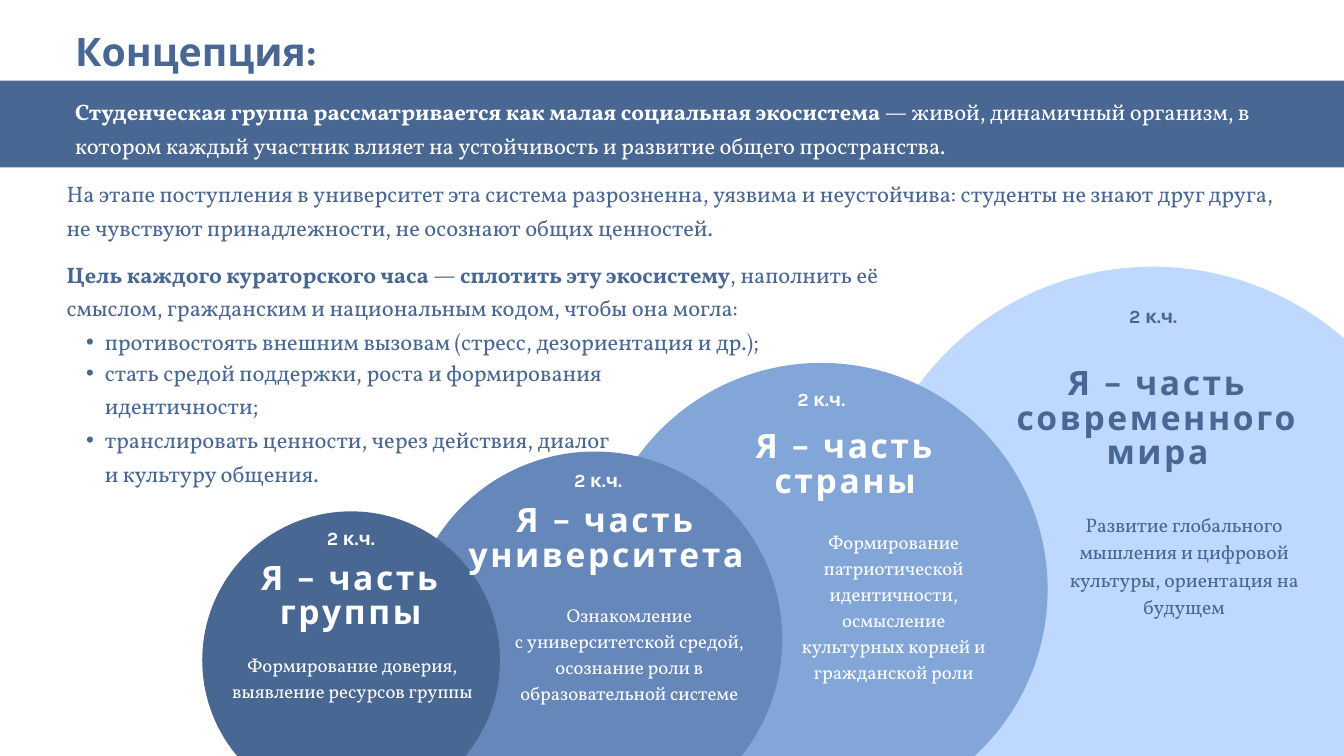
from dataclasses import dataclass
from typing import NamedTuple

from lxml.etree import SubElement
from pptx import Presentation
from pptx.dml.color import RGBColor
from pptx.enum.shapes import MSO_SHAPE
from pptx.enum.text import MSO_ANCHOR, MSO_AUTO_SIZE, PP_ALIGN
from pptx.oxml.ns import qn
from pptx.util import Pt

COLORS = {
    "navy": "496793",
    "steel": "6587B9",
    "sky": "83A6D9",
    "pale": "BED8FF",
    "white": "FFFFFF",
}


class Box(NamedTuple):
    left: float
    top: float
    width: float
    height: float


@dataclass(frozen=True)
class Style:
    font: str
    size: float
    line: float
    color: str
    bold: bool = False
    align: PP_ALIGN = PP_ALIGN.LEFT
    tracking: float = 0


@dataclass(frozen=True)
class Stage:
    fill: str
    ink: str
    circle: Box
    hours_at: tuple[float, float]
    heading: str
    heading_box: Box
    summary: str
    summary_box: Box
    summary_size: float = 20


STAGES = [
    Stage("pale", "navy", Box(923, 285.8, 624.2, 624.2), (1160.6, 329.8),
          "Я – часть современного мира", Box(1069.9, 393.8, 340.6, 112),
          "Развитие глобального мышления и цифровой культуры, ориентация на будущем",
          Box(1139.8, 545, 257.8, 116), 21),
    Stage("sky", "white", Box(637.2, 388.8, 485.3, 485.3), (805, 419),
          "Я – часть страны", Box(750.2, 461.5, 311, 75),
          "Формирование патриотической идентичности, осмысление культурных "
          "корней и гражданской роли",
          Box(845.3, 564.5, 224.6, 165)),
    Stage("steel", "white", Box(436.3, 483.8, 401.8, 401.8), (565.9, 506.2),
          "Я – часть университета", Box(493.9, 540.7, 311, 75),
          "Ознакомление\nс университетской средой, осознание роли "
          "в образовательной системе",
          Box(542.9, 643, 262.8, 109)),
    Stage("navy", "white", Box(216.7, 547.9, 319, 319), (301, 567.4),
          "Я – часть группы", Box(239.8, 602.6, 272, 75),
          "Формирование доверия, выявление ресурсов группы",
          Box(242.6, 696.2, 270, 81)),
]

BODY = Style("Vollkorn", 24, 36, "navy")
BAND_TEXT = Style("Vollkorn", 24, 36, "white")
TITLE = Style("Karla", 42, 43.3, "navy", bold=True)


def place(shape, box: Box) -> None:
    shape.left, shape.top, shape.width, shape.height = map(Pt, box)


def prepare_frame(frame) -> None:
    frame.margin_left = frame.margin_top = 0
    frame.margin_right = frame.margin_bottom = 0
    frame.word_wrap = True
    frame.auto_size = MSO_AUTO_SIZE.NONE
    frame.vertical_anchor = MSO_ANCHOR.TOP


def format_paragraph(paragraph, style: Style) -> None:
    paragraph.alignment = style.align
    paragraph.line_spacing = Pt(style.line)
    paragraph.space_before = paragraph.space_after = Pt(0)
    for run in paragraph.runs:
        run.font.name = style.font
        run.font.size = Pt(style.size)
        run.font.color.rgb = RGBColor.from_string(COLORS[style.color])
        if run.font.bold is None:
            run.font.bold = style.bold
        if style.tracking:
            run._r.get_or_add_rPr().set("spc", str(round(style.tracking * 100)))


def write(frame, text: str, style: Style) -> None:
    prepare_frame(frame)
    frame.text = text
    for paragraph in frame.paragraphs:
        format_paragraph(paragraph, style)


def write_mixed(paragraph, parts: list[tuple[str, bool]], style: Style) -> None:
    for text, bold in parts:
        run = paragraph.add_run()
        run.text = text
        run.font.bold = bold
    format_paragraph(paragraph, style)


def set_bullet(paragraph, char: str = "", margin: float = 0, indent: float = 0) -> None:
    properties = paragraph._p.get_or_add_pPr()
    properties.set("marL", str(Pt(margin)))
    properties.set("indent", str(Pt(indent)))
    if char:
        SubElement(properties, qn("a:buChar")).set("char", char)
    else:
        SubElement(properties, qn("a:buNone"))


def write_item(paragraph, text: str) -> None:
    paragraph.text = text
    paragraph.level = 1
    set_bullet(paragraph, "•", 41, -20)
    format_paragraph(paragraph, BODY)


def add_text(slide, box: Box, text: str, style: Style):
    label = slide.shapes.add_textbox(*map(Pt, box))
    write(label.text_frame, text, style)
    return label


def add_filled(slide, kind: MSO_SHAPE, box: Box, color: str) -> None:
    shape = slide.shapes.add_shape(kind, *map(Pt, box))
    shape.shadow.inherit = False
    shape.fill.solid()
    shape.fill.fore_color.rgb = RGBColor.from_string(COLORS[color])
    shape.line.fill.background()


def add_stage_text(slide, stage: Stage) -> None:
    center = PP_ALIGN.CENTER
    add_text(slide, Box(*stage.hours_at, 150, 21), "2 к.ч.",
             Style("Karla", 20, 20.6, stage.ink, True, center))
    add_text(slide, stage.heading_box, stage.heading,
             Style("Karla", 36, 37.1, stage.ink, True, center, 2.8))
    add_text(slide, stage.summary_box, stage.summary,
             Style("Vollkorn", stage.summary_size, stage.summary_size * 1.4,
                   stage.ink, align=center))


def main() -> None:
    deck = Presentation()
    deck.slide_width, deck.slide_height = Pt(1440), Pt(810)
    slide = deck.slides.add_slide(deck.slide_layouts[3])
    title, goal, tasks = slide.placeholders

    # Title
    place(title, Box(80.6, 36.7, 389, 45))
    write(title.text_frame, "Концепция:", TITLE)

    # Goal and its list
    place(goal, Box(71.3, 272.2, 886, 103))
    prepare_frame(goal.text_frame)
    purpose = goal.text_frame.paragraphs[0]
    set_bullet(purpose)
    write_mixed(purpose, [
        ("Цель каждого кураторского часа ", True),
        ("— ", False),
        ("сплотить эту экосистему", True),
        (", наполнить её смыслом, гражданским и национальным кодом, "
         "чтобы она могла:", False),
    ], BODY)
    write_item(goal.text_frame.add_paragraph(),
               "противостоять внешним вызовам (стресс, дезориентация и др.);")

    place(tasks, Box(71.3, 377.3, 644, 143))
    prepare_frame(tasks.text_frame)
    write_item(tasks.text_frame.paragraphs[0],
               "стать средой поддержки, роста и формирования идентичности;")
    write_item(tasks.text_frame.add_paragraph(),
               "транслировать ценности, через действия, диалог\vи культуру общения.")

    # Circles of the ecosystem, largest at the back
    for stage in STAGES:
        add_filled(slide, MSO_SHAPE.OVAL, stage.circle, stage.fill)
    for stage in STAGES:
        add_stage_text(slide, stage)

    # Definition band
    add_filled(slide, MSO_SHAPE.RECTANGLE, Box(-12, 86.4, 1465, 92.9), "navy")
    definition = add_text(slide, Box(80.6, 97.9, 1295, 68), "", BAND_TEXT)
    write_mixed(definition.text_frame.paragraphs[0], [
        ("Студенческая группа рассматривается как малая социальная экосистема ", True),
        ("— живой, динамичный организм, в котором каждый участник влияет на "
         "устойчивость и развитие общего пространства.", False),
    ], BAND_TEXT)

    # Starting situation
    add_text(slide, Box(71.3, 185.8, 1300, 72),
             "На этапе поступления в университет эта система разрозненна, уязвима и "
             "неустойчива: студенты не знают друг друга, не чувствуют принадлежности, "
             "не осознают общих ценностей.", BODY)

    deck.save("out.pptx")


if __name__ == "__main__":
    main()
